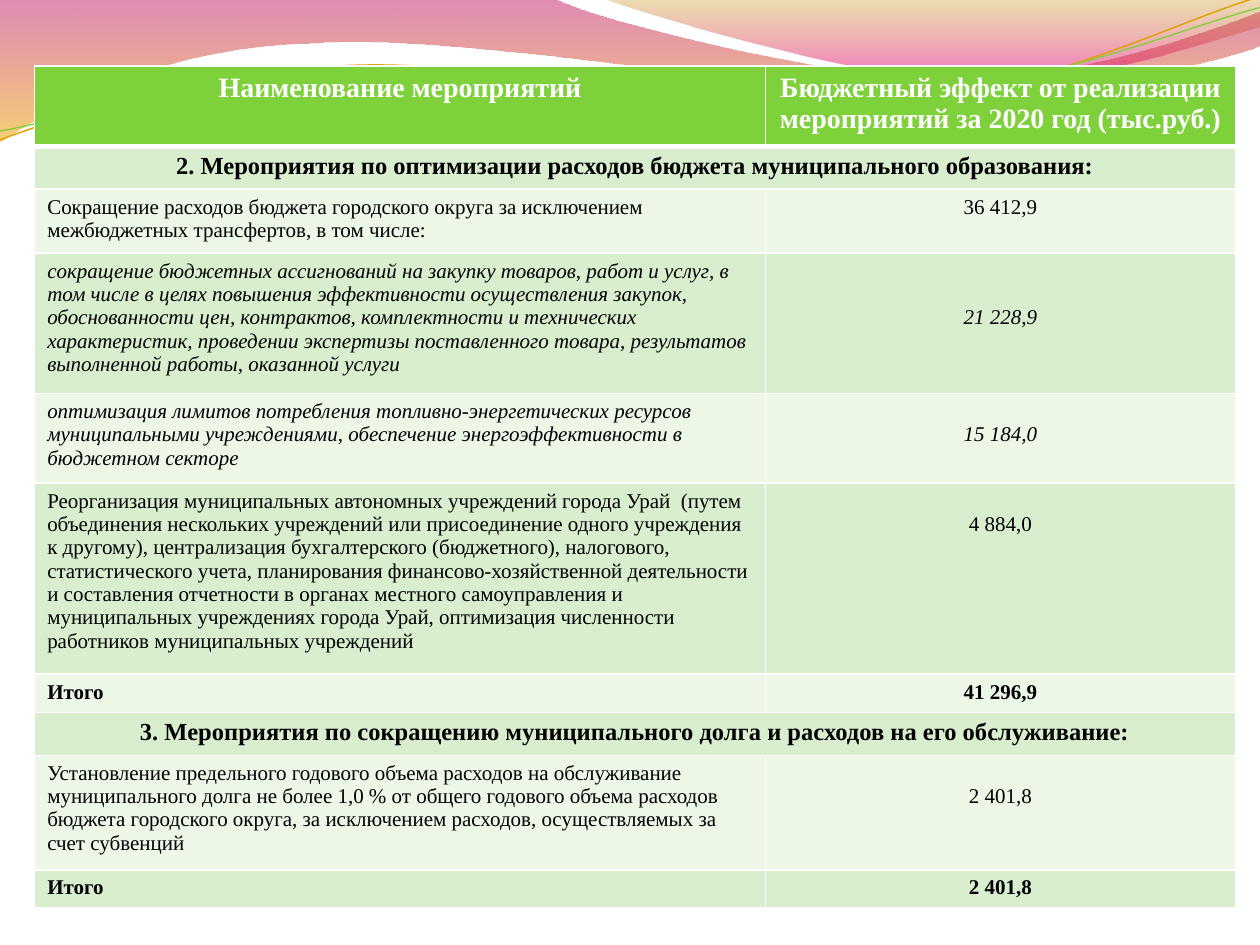
from dataclasses import dataclass
from math import cos, radians, sin
from typing import NamedTuple

from lxml.etree import SubElement
from pptx import Presentation
from pptx.dml.color import RGBColor
from pptx.enum.text import PP_ALIGN
from pptx.oxml.ns import qn
from pptx.util import Emu, Inches, Pt


@dataclass(frozen=True)
class Theme:
    font: str = "Times New Roman"
    header_size: int = 16
    section_size: int = 14
    body_size: int = 12
    white: str = "FFFFFF"
    black: str = "000000"
    green: str = "7FD13B"
    orange: str = "E0A209"
    bands: tuple = ("D8EECE", "ECF7E8")


class Stop(NamedTuple):
    position: float
    color: str
    opacity: int


class Ribbon(NamedTuple):
    start: tuple
    segments: list  # two numbers: straight line, six numbers: Bezier curve
    stops: tuple


class Strand(NamedTuple):
    start: tuple
    segments: list
    color: str
    width: float


class Row(NamedTuple):
    height: float  # grid rows
    label: str
    value: str = ""  # an empty value makes a section heading
    lead: int = 0  # body lines left free above the value
    bold: bool = False
    italic: bool = False


THEME = Theme()
SLIDE_W, SLIDE_H = Inches(10), Inches(7.5)
COL, ROW = SLIDE_W / 1000, SLIDE_H / 750  # fine grid of the slide
LINE = 18.4  # grid rows in one body line
MARGIN = 5
TABLE_LEFT, TABLE_TOP = 27.5, 52.2
TABLE_COLS = (580, 373)
STRAND_TILT = 2.7  # degrees, counter-clockwise
STRAND_CENTER = (499, 58)

RIBBONS = [
    Ribbon((-1, -1), [(440, -1), (476, 17, 664, 63, 758, 63), (853, 63, 958, 26, 1000, 9),
                      (1001, 36), (983, 44, 870, 76, 746, 75), (622, 75, 382, 28, 257, 34),
                      (129, 36, 46, 83, -1, 113)],
           (Stop(0, "BD0059", 45), Stop(1, "F0AB00", 55))),
    Ribbon((479, -1), [(509, 11, 682, 62, 769, 65), (856, 69, 961, 32, 1000, 21), (1000, 0)],
           (Stop(0, "C38B00", 30), Stop(0.8, "E1006B", 45))),
]
STRANDS = [
    Strand((0, 111), [(48, 93, 158, 57, 277, 52), (395, 47, 593, 89, 713, 80),
                      (833, 71, 938, 15, 998, -2)], THEME.orange, 0.85),
    Strand((0, 104), [(47, 96, 164, 61, 283, 56), (403, 51, 597, 84, 717, 75),
                      (836, 67, 941, 21, 1000, 6)], THEME.green, 0.75),
]
ROWS = [
    Row(64, "Наименование мероприятий",
        "Бюджетный эффект от реализации мероприятий за 2020 год (тыс.руб.)", bold=True),
    Row(34, "2. Мероприятия по оптимизации расходов бюджета муниципального образования:",
        bold=True),
    Row(50.8, "Сокращение расходов бюджета городского округа за исключением межбюджетных "
        "трансфертов, в том числе:", "36 412,9"),
    Row(111.4, "cокращение бюджетных ассигнований на закупку товаров, работ и услуг, в том "
        "числе в целях повышения эффективности осуществления закупок, обоснованности цен, "
        "контрактов, комплектности и технических характеристик, проведении экспертизы "
        "поставленного товара, результатов выполненной работы, оказанной услуги",
        "21 228,9", lead=2, italic=True),
    Row(71.2, "оптимизация лимитов потребления топливно-энергетических ресурсов муниципальными "
        "учреждениями, обеспечение энергоэффективности в бюджетном секторе",
        "15 184,0", lead=1, italic=True),
    Row(151.6, "Реорганизация муниципальных автономных учреждений города Урай  (путем "
        "объединения нескольких учреждений или присоединение одного учреждения к другому), "
        "централизация бухгалтерского (бюджетного), налогового, статистического учета, "
        "планирования финансово-хозяйственной деятельности и составления отчетности в органах "
        "местного самоуправления и муниципальных учреждениях города Урай, оптимизация "
        "численности работников муниципальных учреждений", "4 884,0", lead=1),
    Row(30.4, "Итого", "41 296,9", bold=True),
    Row(34, "3. Мероприятия по сокращению муниципального долга и расходов на его обслуживание:",
        bold=True),
    Row(91, "Установление предельного годового объема расходов на обслуживание муниципального "
        "долга не более 1,0 % от общего годового объема расходов бюджета городского округа, за "
        "исключением расходов, осуществляемых за счет субвенций", "2 401,8", lead=1),
    Row(30.4, "Итого", "2 401,8", bold=True),
]


def rgb(color: str) -> RGBColor:
    return RGBColor.from_string(color)


def emu_points(segment: tuple, tilt: float) -> list:
    """Points of a segment in EMU, turned clockwise by tilt degrees."""
    cx, cy = STRAND_CENTER
    a = radians(tilt)
    pairs = [(x - cx, y - cy) for x, y in zip(segment[::2], segment[1::2])]
    return [(round((cx + x * cos(a) - y * sin(a)) * COL),
             round((cy + x * sin(a) + y * cos(a)) * ROW)) for x, y in pairs]


def add_outline(s, start: tuple, segments: list, close: bool, tilt: float = 0):
    curves = [emu_points(seg, tilt) for seg in segments]
    builder = s.shapes.build_freeform(*emu_points(start, tilt)[0])
    builder.add_line_segments([points[-1] for points in curves], close=close)
    sp = builder.convert_to_shape()
    sp.shadow.inherit = False
    # Bend the straight sides that have control points
    sides = list(sp._element.iter(qn("a:lnTo")))
    for side, points in zip(sides, curves):
        if len(points) == 3:
            bezier = SubElement(side.getparent(), qn("a:cubicBezTo"))
            for x, y in points:
                SubElement(bezier, qn("a:pt"), x=str(x - sp.left), y=str(y - sp.top))
            side.getparent().replace(side, bezier)
    sp.rotation = -tilt
    return sp


def add_ribbon(s, ribbon: Ribbon) -> None:
    sp = add_outline(s, ribbon.start, ribbon.segments, close=True)
    sp.line.fill.background()
    sp.fill.gradient()
    sp.fill.gradient_angle = 270
    for gs, stop in zip(sp.fill.gradient_stops, ribbon.stops):
        gs.position = stop.position
        gs.color.rgb = rgb(stop.color)
    colors = list(sp._element.spPr.iter(qn("a:srgbClr")))
    for clr, stop in zip(colors, ribbon.stops):
        SubElement(clr, qn("a:alpha"), val=str(stop.opacity * 1000))


def add_strand(s, strand: Strand) -> None:
    sp = add_outline(s, strand.start, strand.segments, close=False, tilt=STRAND_TILT)
    sp.fill.background()
    sp.line.color.rgb = rgb(strand.color)
    sp.line.width = Pt(strand.width)


def set_borders(cell, top: float, bottom: float) -> None:
    tc_pr = cell._tc.get_or_add_tcPr()
    widths = {"a:lnL": 1, "a:lnR": 1, "a:lnT": top, "a:lnB": bottom}
    for i, (tag, width) in enumerate(widths.items()):
        ln = SubElement(tc_pr, qn(tag), w=str(Pt(width)))
        fill = SubElement(ln, qn("a:solidFill"))
        SubElement(fill, qn("a:srgbClr"), val=THEME.white)
        tc_pr.insert(i, ln)  # borders come before the fill


def write_cell(cell, text: str, row: Row, size: int, color: str, centered: bool) -> None:
    tf = cell.text_frame
    tf.text = text
    p = tf.paragraphs[0]
    p.alignment = PP_ALIGN.CENTER if centered else PP_ALIGN.LEFT
    for r in p.runs:
        r.font.name, r.font.size = THEME.font, Pt(size)
        r.font.bold, r.font.italic = row.bold, row.italic
        r.font.color.rgb = rgb(color)


def add_budget_table(s) -> None:
    height = sum(row.height for row in ROWS)
    frame = s.shapes.add_table(len(ROWS), len(TABLE_COLS), Emu(round(TABLE_LEFT * COL)),
                               Emu(round(TABLE_TOP * ROW)), Emu(round(sum(TABLE_COLS) * COL)),
                               Emu(round(height * ROW)))
    table = frame.table
    for column, width in zip(table.columns, TABLE_COLS):
        column.width = Emu(round(width * COL))
    for i, row in enumerate(ROWS):
        table.rows[i].height = Emu(round(row.height * ROW))
        header, section = i == 0, not row.value
        size = (THEME.header_size if header else
                THEME.section_size if section else THEME.body_size)
        fill = THEME.green if header else THEME.bands[(i - 1) % 2]
        for j, text in enumerate((row.label, row.value)):
            cell = table.cell(i, j)
            cell.fill.solid()
            cell.fill.fore_color.rgb = rgb(fill)
            set_borders(cell, top=3 if i == 1 else 1, bottom=3 if header else 1)
            cell.margin_top = Emu(round((MARGIN + j * row.lead * LINE) * ROW))
            if text:
                write_cell(cell, text, row, size, THEME.white if header else THEME.black,
                           centered=header or section or j == 1)
        if section:
            table.cell(i, 0).merge(table.cell(i, 1))


def main() -> None:
    prs = Presentation()
    prs.slide_width, prs.slide_height = SLIDE_W, SLIDE_H
    s = prs.slides.add_slide(prs.slide_layouts[6])
    # Decorative waves along the top
    for ribbon in RIBBONS:
        add_ribbon(s, ribbon)
    for strand in STRANDS:
        add_strand(s, strand)
    # Budget measures
    add_budget_table(s)
    prs.save("out.pptx")


if __name__ == "__main__":
    main()
